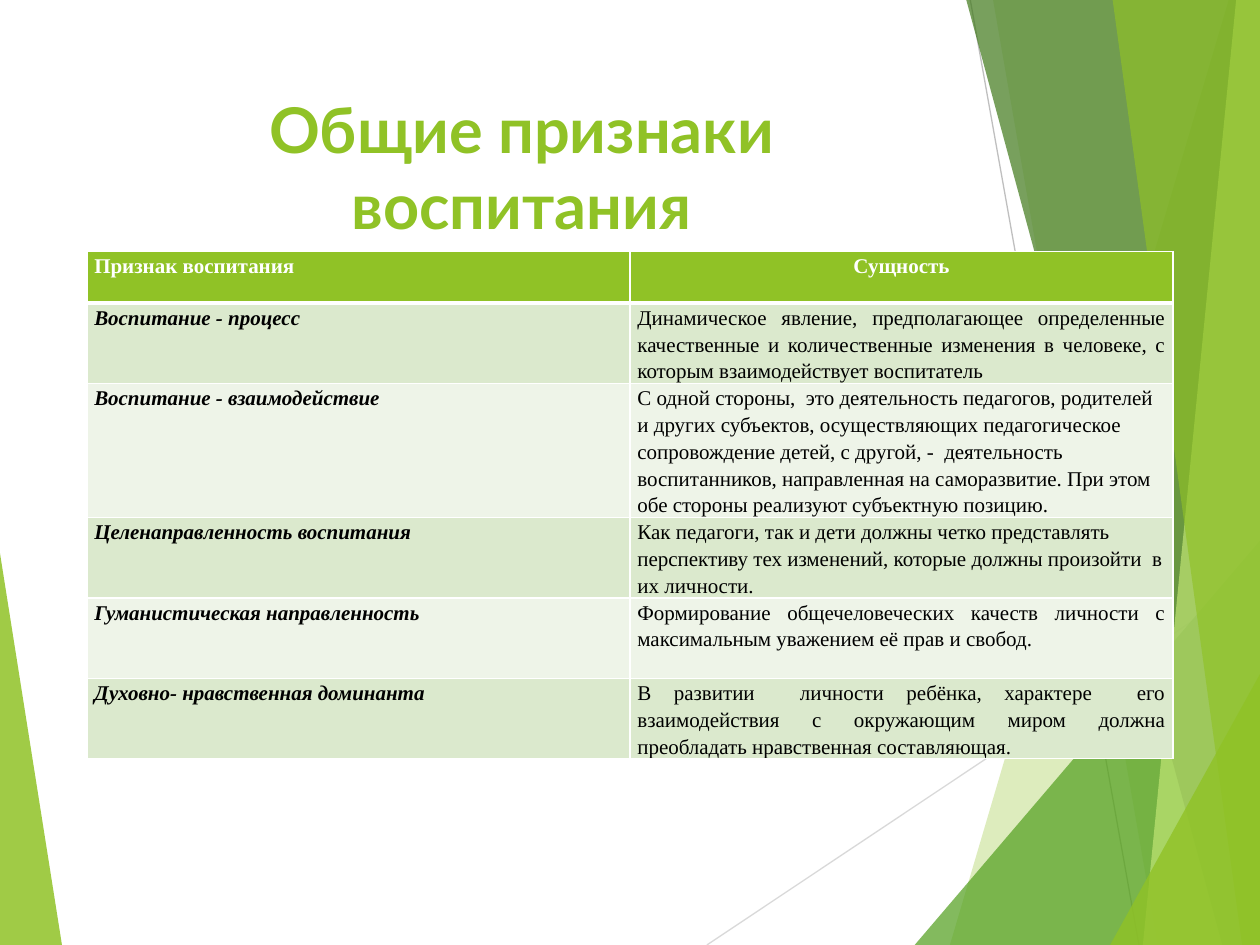
"""Builds a slide with a table of the general features of upbringing."""
from lxml.etree import SubElement
from pptx import Presentation
from pptx.dml.color import RGBColor
from pptx.enum.shapes import MSO_CONNECTOR
from pptx.enum.text import MSO_ANCHOR, PP_ALIGN
from pptx.oxml.ns import qn
from pptx.util import Cm, Pt

WHITE = RGBColor(0xFF, 0xFF, 0xFF)
BLACK = RGBColor(0, 0, 0)
LIME = RGBColor(0x90, 0xC2, 0x26)
GREEN = RGBColor(0x54, 0xA0, 0x21)
FOREST = RGBColor(0x3F, 0x78, 0x19)
PALE_LIME = RGBColor(0xC0, 0xE4, 0x74)
BAND_DARK = RGBColor(0xDB, 0xE9, 0xCD)
BAND_LIGHT = RGBColor(0xEE, 0xF4, 0xE8)
LIGHT_GRAY = RGBColor(0xD9, 0xD9, 0xD9)
GRAY = RGBColor(0xBF, 0xBF, 0xBF)

WIDTH, HEIGHT = 25.4, 19.05
TITLE = "Общие признаки воспитания"
LEFT, CENTER, JUSTIFY = PP_ALIGN.LEFT, PP_ALIGN.CENTER, PP_ALIGN.JUSTIFY

ROWS = [
    ("Признак воспитания", "Сущность", CENTER, 1.04),
    ("Воспитание - процесс",
     "Динамическое явление, предполагающее определенные качественные и количественные "
     "изменения в человеке, с которым взаимодействует воспитатель", JUSTIFY, 1.62),
    ("Воспитание - взаимодействие",
     "С одной стороны,  это деятельность педагогов, родителей и других субъектов, "
     "осуществляющих педагогическое сопровождение детей, с другой, -  деятельность "
     "воспитанников, направленная на саморазвитие. При этом обе стороны реализуют "
     "субъектную позицию.", LEFT, 2.7),
    ("Целенаправленность воспитания",
     "Как педагоги, так и дети должны четко представлять перспективу тех изменений, "
     "которые должны произойти  в их личности.", LEFT, 1.62),
    ("Гуманистическая направленность",
     "Формирование общечеловеческих качеств личности с максимальным уважением её прав "
     "и свобод.", JUSTIFY, 1.62),
    ("Духовно- нравственная доминанта",
     "В развитии  личности ребёнка, характере  его взаимодействия с окружающим миром "
     "должна преобладать нравственная составляющая.", JUSTIFY, 1.62),
]

RAYS = [
    ((14.25, HEIGHT), (WIDTH, 11.61), LIGHT_GRAY),
    ((19.56, 0), (22.96, HEIGHT), GRAY),
]
LEFT_FACET = ([(0, 11.15), (1.25, HEIGHT), (0, HEIGHT)], LIME, 85)
RIGHT_FACETS = [
    ([(24.77, 0), (19.15, HEIGHT)], 0, LIME, 30),
    ([(20.02, 0), (23.34, HEIGHT)], 0, LIME, 20),
    ([(18.44, HEIGHT)], 10.9, GREEN, 72),
    ([(19.48, 0), (24.64, HEIGHT)], 0, FOREST, 70),
    ([(24.92, 0), (23.04, HEIGHT)], 0, PALE_LIME, 70),
    ([(22.43, 0), (25.04, HEIGHT)], 0, LIME, 65),
    ([(22.38, HEIGHT)], 13.59, LIME, 80),
]


def add_facet(page, points, color, opacity):
    corners = [(Cm(x), Cm(y)) for x, y in points]
    builder = page.shapes.build_freeform(*corners[0])
    builder.add_line_segments(corners[1:])
    facet = builder.convert_to_shape()
    facet.shadow.inherit = False
    facet.line.fill.background()
    facet.fill.solid()
    facet.fill.fore_color.rgb = color
    tint = facet.fill._xPr.find(qn("a:solidFill"))[0]
    SubElement(tint, qn("a:alpha"), val=str(opacity * 1000))


def add_ray(page, start, end, color):
    ray = page.shapes.add_connector(
        MSO_CONNECTOR.STRAIGHT, *(Cm(value) for value in start + end))
    ray.line.color.rgb = color
    ray.line.width = Pt(0.75)
    SubElement(ray._element.spPr, qn("a:effectLst"))


def add_borders(cell, widths):
    properties = cell._tc.get_or_add_tcPr()
    for side, width in widths.items():
        border = SubElement(properties, qn(f"a:ln{side}"), w=str(Pt(width)))
        fill = SubElement(border, qn("a:solidFill"))
        SubElement(fill, qn("a:srgbClr"), val=str(WHITE))


def format_text(para, font, size, color, bold, italic=False):
    for span in para.runs:
        span.font.name = font
        span.font.size = Pt(size)
        span.font.color.rgb = color
        span.font.bold = bold
        span.font.italic = italic


def add_title(page):
    title = page.shapes.title
    title.left, title.top, title.width, title.height = Cm(1.7), Cm(1.7), Cm(17.63), Cm(3.66)
    frame = title.text_frame
    frame.text = TITLE
    frame.word_wrap = True
    frame.vertical_anchor = MSO_ANCHOR.TOP
    para = frame.paragraphs[0]
    para.alignment = CENTER
    para.line_spacing = 1.0
    para.space_before = Pt(0)
    format_text(para, "Lato", 36, LIME, True)


def fill_cell(cell, text, alignment, row, column):
    header = row == 0
    add_borders(cell, {"L": 1, "R": 1, "T": 3 if row == 1 else 1, "B": 3 if header else 1})
    cell.fill.solid()
    cell.fill.fore_color.rgb = LIME if header else BAND_DARK if row % 2 else BAND_LIGHT
    cell.margin_left = cell.margin_right = Cm(0.15)
    cell.margin_top = cell.margin_bottom = 0
    cell.text_frame.text = text
    para = cell.text_frame.paragraphs[0]
    para.alignment = alignment
    para.line_spacing = 1.15
    format_text(para, "Times New Roman", 12, WHITE if header else BLACK,
                header or column == 0, not header and column == 0)


def add_features(page):
    total = sum(height for *_, height in ROWS)
    table = page.shapes.add_table(
        len(ROWS), 2, Cm(1.75), Cm(5.07), Cm(21.9), Cm(total)).table
    for row, (feature, essence, alignment, height) in enumerate(ROWS):
        table.rows[row].height = Cm(height)
        fill_cell(table.cell(row, 0), feature, LEFT, row, 0)
        fill_cell(table.cell(row, 1), essence, alignment, row, 1)


def main():
    deck = Presentation()
    deck.slide_width, deck.slide_height = Cm(WIDTH), Cm(HEIGHT)
    page = deck.slides.add_slide(deck.slide_layouts[5])
    add_facet(page, *LEFT_FACET)
    for ray in RAYS:
        add_ray(page, *ray)
    for edge, top, color, opacity in RIGHT_FACETS:
        add_facet(page, edge + [(WIDTH, HEIGHT), (WIDTH, top)], color, opacity)
    add_title(page)
    add_features(page)
    deck.save("out.pptx")


if __name__ == "__main__":
    main()
